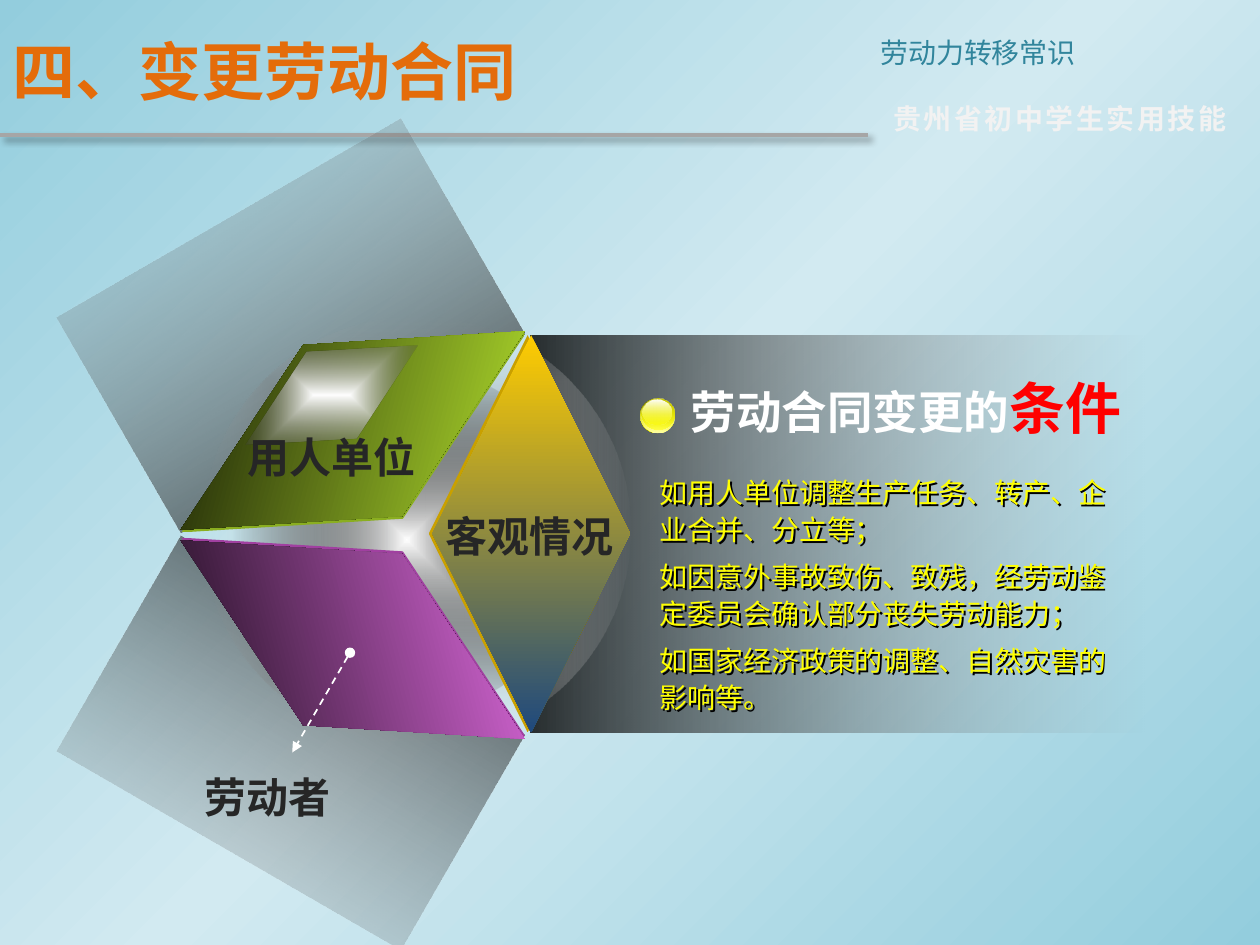
from lxml.etree import SubElement
from pptx import Presentation
from pptx.dml.color import RGBColor
from pptx.enum.dml import MSO_LINE
from pptx.enum.shapes import MSO_CONNECTOR, MSO_SHAPE
from pptx.enum.text import MSO_ANCHOR, PP_ALIGN
from pptx.oxml.ns import qn
from pptx.util import Pt

COLORS = {
    "sky": "93CDDD", "pale": "D2EAF1", "teal": "31859C", "orange": "E46C0A",
    "rule": "A6A6A6", "caption": "F2F2F2", "dark": "262626",
    "black": "000000", "grey": "8F8F8F", "white": "FFFFFF", "red": "FF0000",
    "lime": "CCFF33", "pink": "FF79FF", "gold": "FFCC00", "navy": "1F497D",
    "yellow": "FFFF00", "olive": "767600", "cream": "FFFFA6", "mustard": "CACA00",
    "lime edge": "8AAE20", "pink edge": "A040A0", "gold edge": "C9A000",
}


class SlideBuilder:
    font = "Noto Sans CJK SC"

    def __init__(self, slide):
        self.slide = slide

    def rgb(self, name):
        return RGBColor.from_string(COLORS[name])

    def gradient(self, parent, stops, angle=None):
        """Swap a solid fill for a gradient; no angle means from the centre."""
        solid = parent.find(qn("a:solidFill"))
        grad = parent.makeelement(qn("a:gradFill"), {"rotWithShape": "1"})
        parent.replace(solid, grad)
        gs_list = SubElement(grad, qn("a:gsLst"))
        for pos, color, alpha in stops:
            gs = SubElement(gs_list, qn("a:gs"), pos=str(pos * 1000))
            clr = SubElement(gs, qn("a:srgbClr"), val=COLORS[color])
            if alpha < 100:
                SubElement(clr, qn("a:alpha"), val=str(alpha * 1000))
        if angle is None:
            path = SubElement(grad, qn("a:path"))
            path.set("path", "shape")
            SubElement(path, qn("a:fillToRect"), l="50000", t="50000", r="50000", b="50000")
        else:
            SubElement(grad, qn("a:lin"), ang=str(angle * 60000), scaled="0")

    def background(self, stops, angle):
        self.slide.background.fill.solid()
        self.gradient(self.slide.element.find(".//" + qn("p:bgPr")), stops, angle)

    def effect(self, spPr, shadow=None):
        """A shadow is (blur, distance, opacity in percent)."""
        lst = SubElement(spPr, qn("a:effectLst"))
        if shadow:
            blur, dist, alpha = shadow
            sh = SubElement(lst, qn("a:outerShdw"), blurRad=str(Pt(blur)),
                            dist=str(Pt(dist)), dir=str(45 * 60000), algn="tl")
            clr = SubElement(sh, qn("a:srgbClr"), val=COLORS["black"])
            SubElement(clr, qn("a:alpha"), val=str(alpha * 1000))

    def shape(self, kind, box, start, end, angle=None, rotation=0):
        """Each gradient end is (colour, opacity in percent)."""
        sp = self.slide.shapes.add_shape(kind, *map(Pt, box))
        sp.shadow.inherit = False
        sp.rotation = rotation
        sp.fill.solid()
        self.gradient(sp.element.spPr, [(0, *start), (100, *end)], angle)
        sp.line.fill.background()
        return sp

    def line(self, x1, y1, x2, y2, color, width, dash=None, shadow=None, arrow=False):
        cx = self.slide.shapes.add_connector(
            MSO_CONNECTOR.STRAIGHT, *map(Pt, (x1, y1, x2, y2)))
        cx.line.color.rgb = self.rgb(color)
        cx.line.width = Pt(width)
        if dash:
            cx.line.dash_style = dash
        if arrow:
            ln = cx.line._get_or_add_ln()
            SubElement(ln, qn("a:headEnd"), type="oval")
            SubElement(ln, qn("a:tailEnd"), type="triangle")
        self.effect(cx.element.spPr, shadow)

    def text(self, box, runs, bold=False, wrap=False, inset=(0, 0), anchor=MSO_ANCHOR.TOP,
             align=PP_ALIGN.LEFT, leading=None, shadow=None, spacing=None):
        """Each run is (text, size, colour)."""
        sp = self.slide.shapes.add_textbox(*map(Pt, box))
        if shadow:
            self.effect(sp.element.spPr, shadow)
        tf = sp.text_frame
        tf.word_wrap = wrap
        tf.vertical_anchor = anchor
        tf.margin_left = tf.margin_right = Pt(inset[0])
        tf.margin_top = tf.margin_bottom = Pt(inset[1])
        p = tf.paragraphs[0]
        p.alignment = align
        if leading:
            p.line_spacing = leading
        for content, size, color in runs:
            r = p.add_run()
            r.text = content
            r.font.size = Pt(size)
            r.font.bold = bold
            r.font.color.rgb = self.rgb(color)
            r.font.name = self.font
            rPr = r.font._element
            SubElement(rPr, qn("a:ea"), typeface=self.font)
            if spacing:
                rPr.set("spc", str(int(spacing * 100)))
        return sp


def main():
    prs = Presentation()
    prs.slide_width, prs.slide_height = Pt(720), Pt(540)
    s = SlideBuilder(prs.slides.add_slide(prs.slide_layouts[6]))
    s.background([(0, "sky", 100), (50, "pale", 100), (100, "sky", 100)], 45)

    # Header
    s.line(0, 77, 496, 77, "rule", 2.25, shadow=(4, 3, 40))
    s.text((496, 16.5, 224, 26.6), [("劳动力转移常识", 16, "teal")], wrap=True,
           inset=(7.2, 3.6), align=PP_ALIGN.JUSTIFY)
    s.text((510.5, 57.8, 195, 24), [("贵州省初中学生实用技能", 16, "caption")],
           bold=True, spacing=1.5)
    s.text((0, 3.6, 496, 73.4), [("四、变更劳动合同", 36, "orange")], bold=True,
           wrap=True, inset=(7.2, 3.6), anchor=MSO_ANCHOR.MIDDLE)

    # Fading panels and halos around the cube
    rect, oval, diamond = MSO_SHAPE.RECTANGLE, MSO_SHAPE.OVAL, MSO_SHAPE.DIAMOND
    fade = ("black", 80), ("grey", 0)
    s.shape(rect, (303, 191.5, 351.5, 227), *fade, angle=0)
    s.shape(oval, (116, 181, 244, 244), ("black", 100), ("white", 0))
    for top, rotation in ((311, 120), (72.7, 240)):
        s.shape(rect, (95, top, 142, 227), *fade, angle=0, rotation=rotation)
    s.shape(oval, (133, 209, 199, 199), ("white", 100), ("black", 0))

    # Cube faces, each over a slightly shifted edge, and highlight
    for left, top, dx, dy, start, end, edge, angle, rotation in (
            (88, 189.5, 0.5, 1.5, "black", "lime", "lime edge", 45, 330),
            (88, 309, 0.5, -1.5, "black", "pink", "pink edge", 315, 30),
            (190, 248.5, -2, 0, "gold", "navy", "gold edge", 0, 90)):
        s.shape(diamond, (left + dx, top + dy, 227, 113), (edge, 100), (edge, 100),
                angle, rotation)
        s.shape(diamond, (left, top, 227, 113), (start, 100), (end, 100), angle, rotation)
    s.shape(diamond, (133, 197.3, 113, 57), ("white", 100), ("black", 0), rotation=330)

    # Pointer from the lower face to its label
    s.line(200, 373, 167, 430, "white", 1, dash=MSO_LINE.DASH, arrow=True)

    # Heading with glossy bullet
    heading = [s.text((394.6, 213.3, 250, 39),
                      [("劳动合同变更的", 26, "white"), ("条件", 32, "red")], bold=True)]
    for box, start, end in (
            ((365.8, 227.5, 20, 20), ("olive", 100), ("yellow", 100)),
            ((365.8, 227.5, 19.4, 19.4), ("yellow", 0), ("cream", 100)),
            ((366.5, 227.5, 18.7, 18), ("mustard", 100), ("yellow", 48)),
            ((367.2, 228.2, 16.6, 14.4), ("white", 100), ("yellow", 38))):
        heading.append(s.shape(oval, box, start, end, angle=90))
    s.slide.shapes.add_group_shape(shapes=heading)

    # Cube labels
    for left, top, width, label in ((141.5, 246.5, 97, "用人单位"),
                                    (116.8, 441, 73, "劳动者"),
                                    (254.8, 291.6, 97, "客观情况")):
        s.text((left, top, width, 29), [(label, 24, "dark")], bold=True)

    # Conditions
    conditions = ("如用人单位调整生产任务、转产、企业合并、分立等；",
                  "如因意外事故致伤、致残，经劳动鉴定委员会确认部分丧失劳动能力；",
                  "如国家经济政策的调整、自然灾害的影响等。")
    for i, condition in enumerate(conditions):
        s.text((377, 270 + 48 * i, 266.5, 42.5), [(condition, 16, "yellow")],
               wrap=True, leading=1.1, shadow=(0, 1.5, 100))

    prs.save("out.pptx")


if __name__ == "__main__":
    main()
